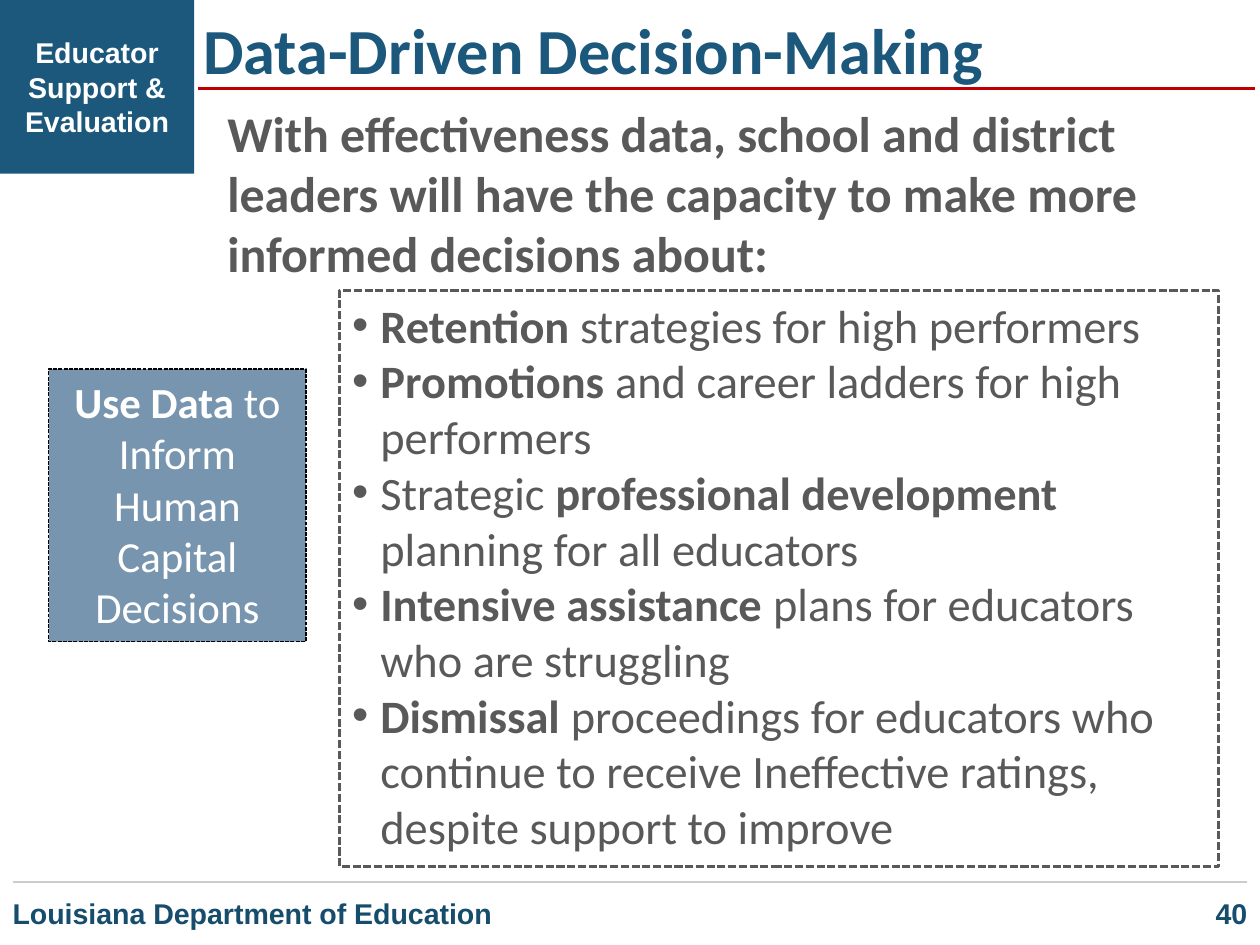
from dataclasses import dataclass

from lxml import etree
from pptx import Presentation
from pptx.dml.color import RGBColor
from pptx.enum.dml import MSO_LINE
from pptx.enum.shapes import MSO_CONNECTOR, MSO_SHAPE
from pptx.enum.text import MSO_ANCHOR, MSO_AUTO_SIZE, PP_ALIGN
from pptx.oxml.ns import qn
from pptx.shapes.autoshape import Shape
from pptx.slide import Slide
from pptx.util import Inches, Pt

RECTANGLE = MSO_SHAPE.RECTANGLE
STRAIGHT = MSO_CONNECTOR.STRAIGHT
SYSTEM_DASH = MSO_LINE.SQUARE_DOT
TOP, MIDDLE = MSO_ANCHOR.TOP, MSO_ANCHOR.MIDDLE
LEFT, CENTER, RIGHT = PP_ALIGN.LEFT, PP_ALIGN.CENTER, PP_ALIGN.RIGHT
NO_AUTOFIT = MSO_AUTO_SIZE.NONE

COLORS = {
    "blue": "1B587C",
    "footer": "164C6C",
    "steel": "7895AF",
    "gray": "595959",
    "red": "C00000",
    "rule": "CCCCCC",
    "white": "FFFFFF",
    "black": "000000",
}
BULLET_INDENT = Inches(0.22)

Run = tuple[str, bool]
Box = tuple[float, float, float, float]


@dataclass(frozen=True)
class Label:
    box: Box
    text: str
    size: int
    color: str
    font: str = "Arial"
    align: PP_ALIGN = LEFT
    anchor: MSO_ANCHOR = MIDDLE


@dataclass(frozen=True)
class Rule:
    left: float
    right: float
    top: float
    color: str
    width: float


LABELS = [
    Label((-0.13, 0.22, 1.77, 0.91), "Educator Support & Evaluation", 16, "white", align=CENTER),
    Label(
        (1.67, 0.75, 8.13, 1.51),
        "With effectiveness data, school and district leaders will have "
        "the capacity to make more informed decisions about:",
        28, "gray", font="Calibri", anchor=TOP,
    ),
    Label((0, 6.86, 4.76, 0.49), "Louisiana Department of Education", 16, "footer"),
    Label((7.06, 6.86, 2.74, 0.49), "40", 16, "footer", align=RIGHT),
]
RULES = [
    Rule(1.54, 9.76, 0.69, "red", 1.5),
    Rule(0.1, 9.7, 6.86, "rule", 0.75),
]
DECISIONS: list[list[Run]] = [
    [("Retention", True), (" strategies for high performers", False)],
    [("Promotions", True), (" and career ladders for high performers", False)],
    [
        ("Strategic ", False),
        ("professional development ", True),
        ("planning for all educators", False),
    ],
    [("Intensive assistance ", True), ("plans for educators who are struggling", False)],
    [
        ("Dismissal ", True),
        (
            "proceedings for educators who continue to receive Ineffective ratings, "
            "despite support to improve",
            False,
        ),
    ],
]
PURPOSE: list[list[Run]] = [
    [("Use Data ", True), ("to Inform Human Capital Decisions", False)],
]


def rgb(name: str) -> RGBColor:
    return RGBColor.from_string(COLORS[name])


def inches(box: Box) -> list[Inches]:
    return [Inches(length) for length in box]


def write_text(
    shape: Shape,
    paragraphs: list[list[Run]],
    *,
    size: int,
    color: str,
    font: str = "Calibri",
    align: PP_ALIGN = LEFT,
    anchor: MSO_ANCHOR = TOP,
    bulleted: bool = False,
) -> None:
    frame = shape.text_frame
    frame.word_wrap = True
    frame.auto_size = NO_AUTOFIT
    frame.vertical_anchor = anchor
    for index, runs in enumerate(paragraphs):
        paragraph = frame.add_paragraph() if index else frame.paragraphs[0]
        paragraph.alignment = align
        if bulleted:
            add_bullet(paragraph._p.get_or_add_pPr())
        for text, bold in runs:
            run = paragraph.add_run()
            run.text = text
            run.font.name = font
            run.font.size = Pt(size)
            run.font.bold = bold
            run.font.color.rgb = rgb(color)


def add_bullet(properties: etree._Element) -> None:
    properties.set("marL", str(BULLET_INDENT))
    properties.set("indent", str(-BULLET_INDENT))
    etree.SubElement(properties, qn("a:buFont")).set("typeface", "Arial")
    etree.SubElement(properties, qn("a:buChar")).set("char", "•")


def add_panel(
    slide: Slide,
    box: Box,
    *,
    fill: str | None = None,
    line: str | None = None,
    line_width: float = 0.75,
) -> Shape:
    panel = slide.shapes.add_shape(RECTANGLE, *inches(box))
    panel.shadow.inherit = False
    if fill:
        panel.fill.solid()
        panel.fill.fore_color.rgb = rgb(fill)
    else:
        panel.fill.background()
    if line:
        panel.line.color.rgb = rgb(line)
        panel.line.width = Pt(line_width)
        panel.line.dash_style = SYSTEM_DASH
    else:
        panel.line.fill.background()
    return panel


def add_label(slide: Slide, label: Label) -> None:
    shape = slide.shapes.add_textbox(*inches(label.box))
    write_text(
        shape, [[(label.text, True)]], size=label.size, color=label.color,
        font=label.font, align=label.align, anchor=label.anchor,
    )


def add_rule(slide: Slide, rule: Rule) -> None:
    top = Inches(rule.top)
    connector = slide.shapes.add_connector(
        STRAIGHT, Inches(rule.left), top, Inches(rule.right), top
    )
    connector.line.color.rgb = rgb(rule.color)
    connector.line.width = Pt(rule.width)
    etree.SubElement(connector._element.spPr, qn("a:effectLst"))


def main() -> None:
    presentation = Presentation()
    presentation.slide_width = Inches(9.8)
    presentation.slide_height = Inches(7.35)
    slide = presentation.slides.add_slide(presentation.slide_layouts[5])

    title = slide.shapes.title
    title.left, title.top, title.width, title.height = inches((1.48, 0.03, 8.32, 0.94))
    write_text(title, [[("Data-Driven Decision-Making", True)]], size=36, color="blue")

    add_panel(slide, (0, 0, 1.51, 1.35), fill="blue")
    decisions = add_panel(slide, (2.64, 2.26, 6.84, 4.48), line="gray", line_width=1.5)
    write_text(decisions, DECISIONS, size=26, color="gray", bulleted=True)
    purpose = add_panel(slide, (0.38, 2.87, 2, 2.12), fill="steel", line="black")
    write_text(purpose, PURPOSE, size=24, color="white", align=CENTER)

    for label in LABELS:
        add_label(slide, label)
    for rule in RULES:
        add_rule(slide, rule)
    presentation.save("out.pptx")


if __name__ == "__main__":
    main()
